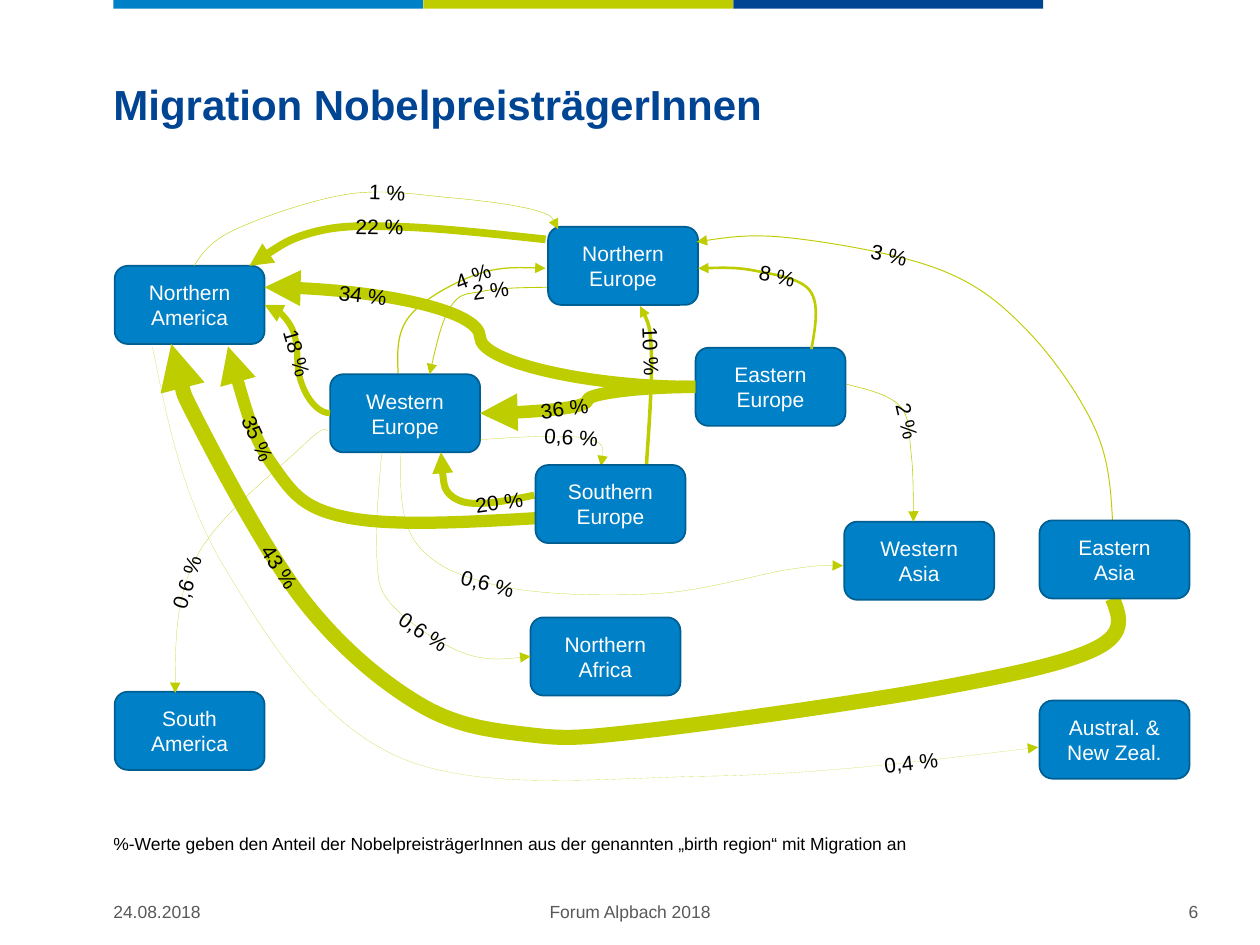
import math

import pptx
import pptx.dml.color
import pptx.enum.shapes
import pptx.enum.text
import pptx.oxml.ns
import pptx.util
from lxml import etree

qn = pptx.oxml.ns.qn
SHAPE = pptx.enum.shapes.MSO_SHAPE
ANCHOR = pptx.enum.text.MSO_ANCHOR
ALIGN = pptx.enum.text.PP_ALIGN
COLORS = {name: pptx.dml.color.RGBColor.from_string(value) for name, value in {
    "blue": "0080C6", "lime": "BECD00", "navy": "004494", "edge": "005F92",
    "grey": "595959", "black": "000000", "white": "FFFFFF"}.items()}

prs = pptx.Presentation()
prs.slide_width = pptx.util.Inches(10)
prs.slide_height = pptx.util.Inches(7.5)
U = prs.slide_width // 100  # the slide is a grid of 100 columns and 75 rows
slide = prs.slides.add_slide(prs.slide_layouts[6])
shapes = slide.shapes


def cells(*values):
    return [round(v * U) for v in values]


def write(s, text, size, color, align=ALIGN.CENTER, anchor=ANCHOR.TOP, bold=False, spacing=None, inset=None):
    """Fill a shape with text, one paragraph per line."""
    tf = s.text_frame
    tf.word_wrap = True
    tf.vertical_anchor = anchor
    if inset is not None:
        tf.margin_left = tf.margin_right = tf.margin_top = tf.margin_bottom = inset
    for i, line in enumerate(text.split("\n")):
        p = tf.add_paragraph() if i else tf.paragraphs[0]
        p.alignment = align
        if spacing:
            p.line_spacing = spacing
        r = p.add_run()
        r.text = line
        r.font.name = "Arial"
        r.font.size = pptx.util.Pt(size)
        r.font.bold = bold
        r.font.color.rgb = COLORS[color]


# Colour bar at the top edge
for i, color in enumerate(("blue", "lime", "navy")):
    s = shapes.add_shape(SHAPE.RECTANGLE, *cells(9 + 24.6 * i, 0, 24.6, 0.7))
    s.shadow.inherit = False
    s.fill.solid()
    s.fill.fore_color.rgb = COLORS[color]
    s.line.fill.background()

# Title, note and footer
s = shapes.add_textbox(*cells(9, 6.7, 57.8, 8.2))
write(s, "Migration NobelpreisträgerInnen", 24, "navy", ALIGN.LEFT, bold=True, spacing=0.9, inset=0)
s = shapes.add_textbox(*cells(9, 65.5, 86, 2.3))
write(s, "%-Werte geben den Anteil der NobelpreisträgerInnen aus der genannten „birth region“ mit Migration an",
      10, "black", ALIGN.LEFT, ANCHOR.BOTTOM, spacing=0.9, inset=0)
for text, x, w, align in (("24.08.2018", 9, 20.3, ALIGN.LEFT), ("Forum Alpbach 2018", 33.1, 33.8, ALIGN.CENTER),
                          ("6", 70.6, 24.5, ALIGN.RIGHT)):
    s = shapes.add_textbox(*cells(x, 71.2, w, 2.3))
    write(s, text, 10, "grey", align, ANCHOR.MIDDLE, inset=0)

# Regions: left and top
boxes = {}
for name, x, y in (
    ("South\nAmerica", 9.1, 54.9), ("Northern\nAmerica", 9.1, 21.1), ("Northern\nAfrica", 42.1, 49),
    ("Western\nEurope", 26.2, 29.7), ("Northern\nEurope", 43.5, 18), ("Eastern\nEurope", 55.2, 27.6),
    ("Western\nAsia", 67, 41.4), ("Austral. & New Zeal.", 82.5, 55.6), ("Eastern\nAsia", 82.5, 41.3),
    ("Southern\nEurope", 42.5, 36.9),
):
    s = shapes.add_shape(SHAPE.FLOWCHART_ALTERNATE_PROCESS, *cells(x, y, 11.9, 6.2))
    s.shadow.inherit = False
    s.fill.solid()
    s.fill.fore_color.rgb = COLORS["blue"]
    s.line.color.rgb = COLORS["edge"]
    s.line.width = pptx.util.Pt(1)
    write(s, name, 12, "white", anchor=ANCHOR.MIDDLE)
    boxes[name] = s

arrows = []  # (shape, line width)
labels = []  # (text, centre, angle)

# S-shaped flows: share, label centre and angle, line width, start, end point, region joined at its right side
for text, centre, angle, width, start, end, goal in (
    ("34 %", 28.8 + 23.4j, 7, 6.87, "Eastern\nEurope", (21, 22.8), None),
    ("36 %", 44.8 + 32.4j, -7, 7.16, "Eastern\nEurope", (38.1, 32.8), "Western\nEurope"),
    ("18 %", 23.6 + 28j, 74, 3.55, "Western\nEurope", (21, 24.2), "Northern\nAmerica"),
):
    s = shapes.add_connector(pptx.enum.shapes.MSO_CONNECTOR.CURVE, 0, 0, *cells(*end))
    s.begin_connect(boxes[start], 1)
    if goal:
        s.end_connect(boxes[goal], 3)
    arrows.append((s, width))
    labels.append((text, centre, angle))

# Free flows: share, label place (segment number plus part of it), line width, knots as x + yj
for text, place, width, knots in (
    ("0,4 %", 3.62, 0.07, (12.1 + 27.5j, 17.8 + 45j, 31.7 + 60.1j, 56.2 + 61.6j, 82.4 + 59.3j)),
    ("0,6 %", 2.5, 0.12, (30.3 + 35.9j, 29.9 + 44.1j, 31.1 + 48j, 36.7 + 51.8j, 42.1 + 52.1j)),
    ("43 %", 6.22, 8.65, (88.3 + 47.5j, 87.1 + 51.4j, 74.6 + 54.6j, 51.2 + 58j, 41.9 + 58.3j,
                          33.3 + 55.9j, 24.2 + 47.8j, 15.9 + 33.9j, 13.6 + 27.3j)),
    ("35 %", 2.28, 7, (43.1 + 41.1j, 27.7 + 41.1j, 21.7 + 37j, 18.1 + 27.5j)),
    ("22 %", 1.2, 4.41, (43.3 + 19j, 31.8 + 18j, 25 + 18.4j, 19.8 + 21.1j)),
    ("1 %", 2.36, 0.22, (15.4 + 21.1j, 18.7 + 18.2j, 27.7 + 15.4j, 35.8 + 15.7j, 42.5 + 16.7j, 44.3 + 18.2j)),
    ("4 %", 1.95, 0.71, (31.6 + 29.6j, 32.5 + 25.1j, 37.8 + 21.8j, 43.3 + 21.3j)),
    ("8 %", 1.65, 1.5, (64.4 + 27.7j, 64.3 + 23.1j, 60 + 21.5j, 55.4 + 21.3j)),
    ("3 %", 3.36, 0.54, (88.3 + 41.3j, 86.9 + 34j, 81.5 + 26.2j, 74.6 + 21.4j, 62.9 + 18.9j, 55.3 + 19.2j)),
    ("10 %", 1, 2, (51.3 + 37j, 51.7 + 27.9j, 50.8 + 24.3j)),
    ("20 %", 0.4, 4, (42.4 + 39.3j, 36.4 + 39.7j, 35 + 35.9j)),
    ("2 %", 0.87, 0.47, (43.4 + 22.8j, 38.4 + 23.1j, 35.8 + 24.3j, 34.1 + 29.7j)),
    ("2 %", 1.4, 0.3, (67.2 + 30.5j, 71.4 + 32.2j, 72.3 + 35.8j, 72.5 + 41.4j)),
    ("0,6 %", 2.2, 0.12, (26 + 34.2j, 23.9 + 35.5j, 15.6 + 44.2j, 13.9 + 55j)),
    ("0,6 %", 1.85, 0.12, (31.8 + 35.9j, 33.1 + 43.2j, 40.1 + 46.6j, 52.3 + 47.1j, 62.6 + 45.2j, 66.9 + 44.9j)),
    ("0,6 %", 0.8, 0.12, (38.1 + 34.9j, 46.5 + 34.8j, 47.7 + 37j)),
):
    # Handles follow the line between a knot's two neighbours
    segments = []
    last = len(knots) - 2
    for i in range(last + 1):
        a, b = knots[i], knots[i + 1]
        out = a + (b - knots[i - 1]) / 6 if i else None
        back = b - (knots[i + 2] - a) / 6 if i < last else (out + b) / 2
        segments.append((a, out if i else (a + back) / 2, back, b))

    builder = shapes.build_freeform(*cells(knots[0].real, knots[0].imag))
    builder.add_line_segments([cells(pt.real, pt.imag) for seg in segments for pt in seg[1:]], close=False)
    s = builder.convert_to_shape()
    s.fill.background()
    # Every three straight steps become one Bézier segment
    outline = next(s.element.iter(qn("a:path")))
    steps = outline.findall(qn("a:lnTo"))
    for i in range(0, len(steps), 3):
        curve = etree.SubElement(outline, qn("a:cubicBezTo"))
        for step in steps[i:i + 3]:
            curve.append(step[0])
            outline.remove(step)
    arrows.append((s, width))

    # The label sits on the curve, turned along it and readable from the left
    a, b, c, d = segments[int(place)]
    t = place % 1
    u = 1 - t
    centre = u**3 * a + 3 * u * u * t * b + 3 * u * t * t * c + t**3 * d
    slope = u * u * (b - a) + 2 * u * t * (c - b) + t * t * (d - c)
    labels.append((text, centre, math.degrees(math.atan(slope.imag / slope.real))))

for s, width in arrows:
    s.line.color.rgb = COLORS["lime"]
    s.line.width = pptx.util.Pt(width)
    spPr = s.element.spPr
    etree.SubElement(spPr.find(qn("a:ln")), qn("a:tailEnd"), type="triangle")
    etree.SubElement(spPr, qn("a:effectLst"))

# These two regions cover the blunt ends of their thick flows
for name in ("Eastern\nAsia", "Southern\nEurope"):
    box = boxes[name].element
    box.getparent().append(box)

for text, centre, angle in labels:
    s = shapes.add_textbox(*cells(centre.real - 3.25, centre.imag - 1.5, 6.5, 3))
    s.rotation = angle
    write(s, text, 12, "black")

prs.save("out.pptx")
